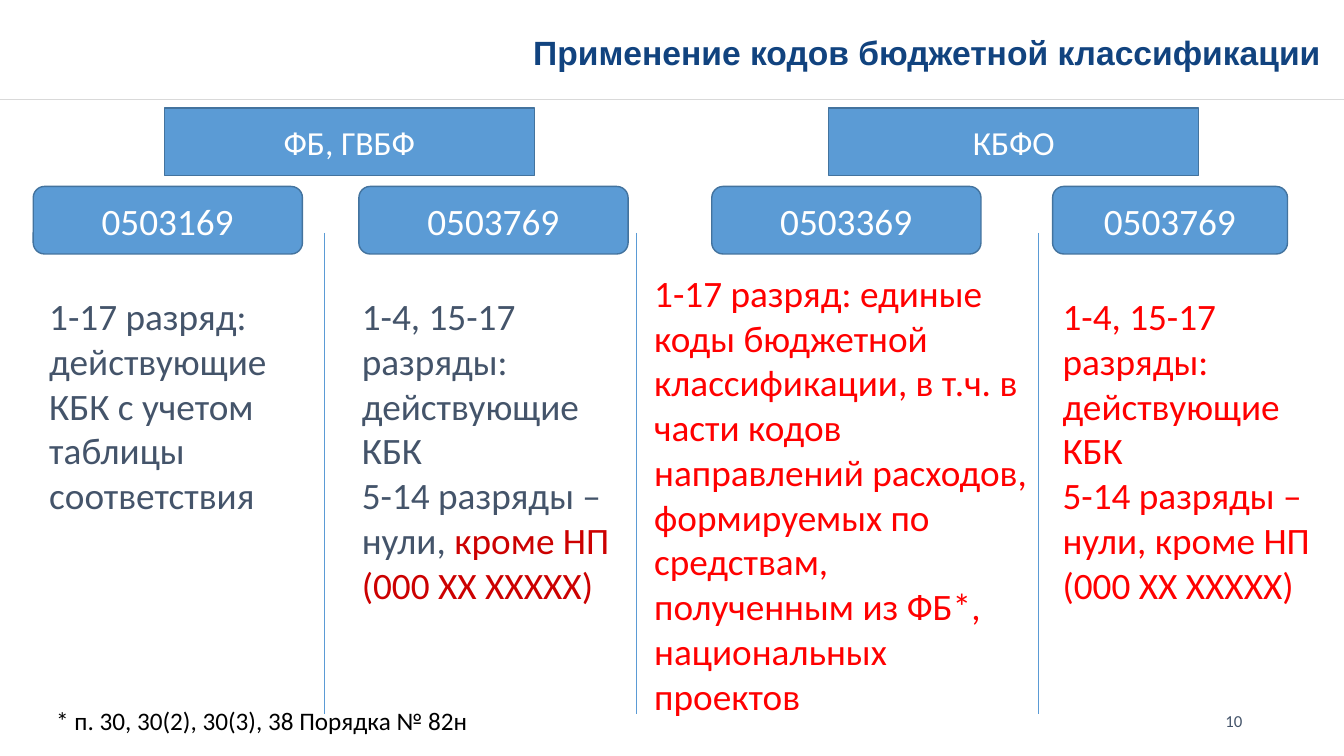
from dataclasses import dataclass

from lxml.etree import SubElement
from pptx import Presentation
from pptx.dml.color import RGBColor
from pptx.enum.shapes import MSO_CONNECTOR, MSO_SHAPE
from pptx.enum.text import MSO_ANCHOR, PP_ALIGN
from pptx.oxml.ns import qn
from pptx.util import Inches, Pt


@dataclass(frozen=True)
class Theme:
    heading_font: str = "Arial"
    body_font: str = "Calibri"
    navy: str = "11437F"
    slate: str = "44546A"
    blue: str = "5B9BD5"
    outline: str = "43739E"
    rule: str = "D9D9D9"
    red: str = "FF0000"
    dark_red: str = "CC0000"
    white: str = "FFFFFF"
    black: str = "000000"
    heading_size: float = 24
    body_size: float = 26.67
    note_size: float = 18
    number_size: float = 12


THEME = Theme()

TITLE = "Применение кодов бюджетной классификации "
FOOTNOTE = "* п. 30, 30(2), 30(3), 38 Порядка № 82н"
PAGE_NUMBER = "10"

BUDGETS = [("ФБ, ГВБФ", 1.63), ("КБФО", 8.22)]
FORMS = [
    ("0503169", 0.33, 2.67),
    ("0503769", 3.56, 2.67),
    ("0503369", 7.06, 2.67),
    ("0503769", 10.44, 2.33),
]
RULES = [
    ((0.39, 2.86, 2.67, 2.35), THEME.slate,
     [["1-17 разряд: действующие КБК с учетом таблицы соответствия"]]),
    ((3.49, 2.86, 2.78, 3.24), THEME.slate,
     [["1-4, 15-17 разряды: действующие КБК"],
      ["5-14 разряды – нули, ", ("кроме НП (000 ХХ ХХХХХ)", THEME.dark_red)]]),
    ((6.39, 2.63, 3.95, 4.59), THEME.red,
     [["1-17 разряд: единые коды бюджетной классификации, в т.ч. в части "
       "кодов направлений расходов, формируемых по средствам, полученным "
       "из ФБ*, национальных проектов"]]),
    ((10.44, 2.86, 2.67, 3.24), THEME.red,
     [["1-4, 15-17 разряды: действующие КБК"],
      ["5-14 разряды – нули, кроме НП (000 ХХ ХХХХХ)"]]),
]
DIVIDERS = [3.22, 6.31, 10.3]

SLIDE_WIDTH, SLIDE_HEIGHT = 13.33, 7.5
HEADER_RULE_Y = 0.99
BUDGET_TOP, BUDGET_WIDTH = 1.07, 3.67
FORM_TOP, BOX_HEIGHT = 1.85, 0.67
DIVIDER_TOP, DIVIDER_BOTTOM = 2.31, 7.08


def rgb(value):
    return RGBColor.from_string(value)


def write(frame, paragraphs, color, size, font=THEME.body_font,
          align=PP_ALIGN.LEFT, anchor=MSO_ANCHOR.TOP, bold=False):
    frame.word_wrap = True
    frame.vertical_anchor = anchor
    for index, pieces in enumerate(paragraphs):
        paragraph = frame.paragraphs[0] if index == 0 else frame.add_paragraph()
        paragraph.alignment = align
        paragraph.font.name = font
        paragraph.font.size = Pt(size)
        paragraph.font.bold = bold
        paragraph.font.color.rgb = rgb(color)
        for piece in pieces:
            run = paragraph.add_run()
            if isinstance(piece, tuple):
                run.text, accent = piece
                run.font.color.rgb = rgb(accent)
            else:
                run.text = piece


def add_text(slide, place, paragraphs, color, size, **style):
    frame = slide.shapes.add_textbox(*map(Inches, place)).text_frame
    write(frame, paragraphs, color, size, **style)
    return frame


def add_label(slide, kind, place, label, size):
    box = slide.shapes.add_shape(kind, *map(Inches, place))
    box.shadow.inherit = False
    box.fill.solid()
    box.fill.fore_color.rgb = rgb(THEME.blue)
    box.line.color.rgb = rgb(THEME.outline)
    box.line.width = Pt(1)
    write(box.text_frame, [[label]], THEME.white, size,
          align=PP_ALIGN.CENTER, anchor=MSO_ANCHOR.MIDDLE)


def add_line(slide, start, end, color, width):
    line = slide.shapes.add_connector(
        MSO_CONNECTOR.STRAIGHT, *map(Inches, (*start, *end)))
    line.line.color.rgb = rgb(color)
    line.line.width = Pt(width)
    SubElement(line._element.spPr, qn("a:effectLst"))


def main():
    deck = Presentation()
    deck.slide_width = Inches(SLIDE_WIDTH)
    deck.slide_height = Inches(SLIDE_HEIGHT)
    slide = deck.slides.add_slide(deck.slide_layouts[6])

    add_line(slide, (0, HEADER_RULE_Y), (SLIDE_WIDTH, HEADER_RULE_Y), THEME.rule, 1)
    add_text(slide, (9.42, 6.95, 3, 0.4), [[PAGE_NUMBER]], THEME.slate,
             THEME.number_size, align=PP_ALIGN.RIGHT, anchor=MSO_ANCHOR.MIDDLE)
    title = add_text(slide, (4.52, 0.32, 8.67, 0.4), [[TITLE]], THEME.navy,
                     THEME.heading_size, font=THEME.heading_font,
                     align=PP_ALIGN.RIGHT, bold=True)
    title.margin_left = title.margin_right = 0
    title.margin_top = title.margin_bottom = 0

    for budget, left in BUDGETS:
        add_label(slide, MSO_SHAPE.RECTANGLE,
                  (left, BUDGET_TOP, BUDGET_WIDTH, BOX_HEIGHT),
                  budget, THEME.heading_size)
    for form, left, width in FORMS:
        add_label(slide, MSO_SHAPE.ROUNDED_RECTANGLE,
                  (left, FORM_TOP, width, BOX_HEIGHT), form, THEME.body_size)
    for x in DIVIDERS:
        add_line(slide, (x, DIVIDER_TOP), (x, DIVIDER_BOTTOM), THEME.blue, 0.5)
    for place, color, paragraphs in RULES:
        add_text(slide, place, paragraphs, color, THEME.body_size)
    add_text(slide, (0.46, 6.95, 8.47, 0.4), [[FOOTNOTE]], THEME.black,
             THEME.note_size)

    deck.save("out.pptx")


if __name__ == "__main__":
    main()
